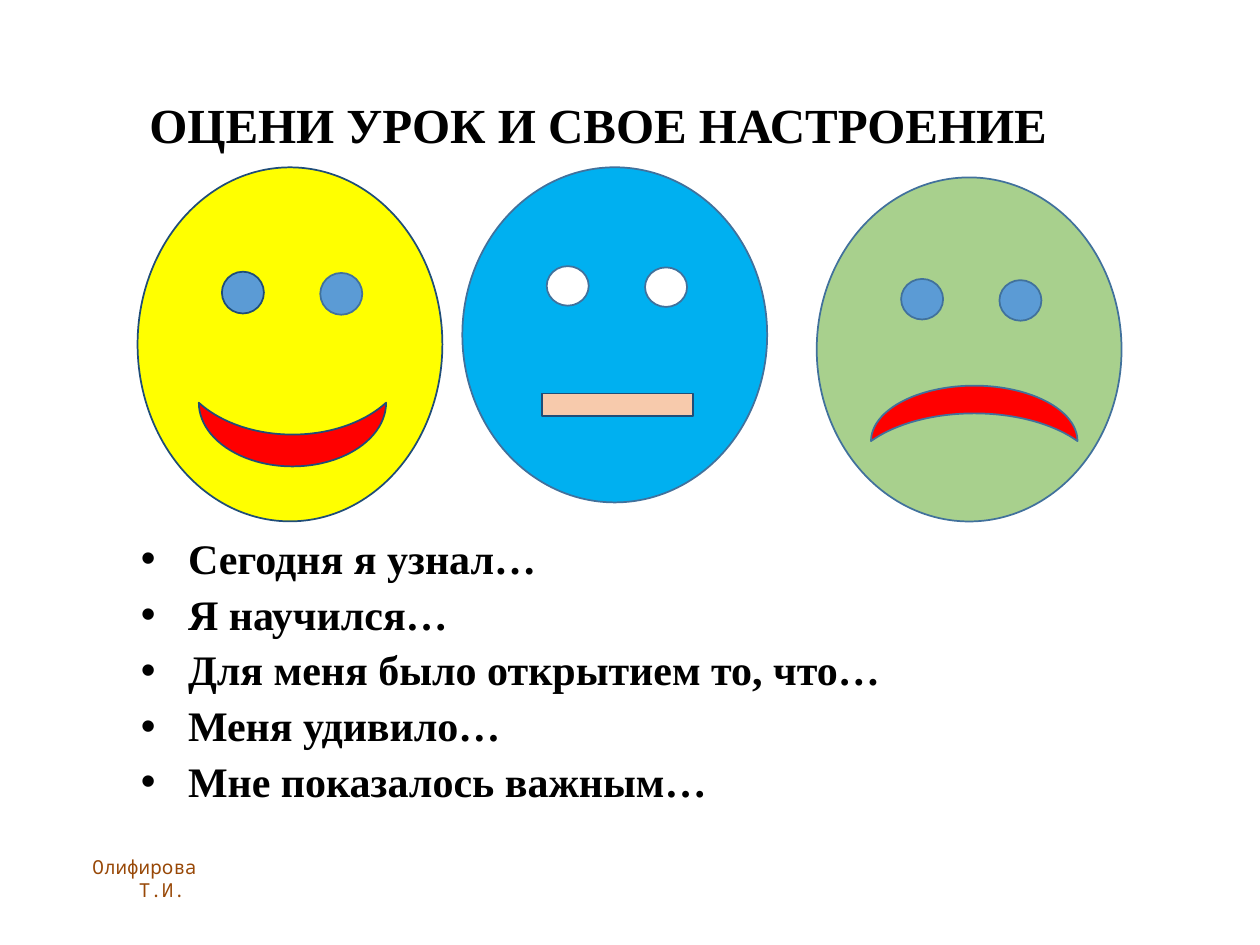
from lxml.etree import SubElement
from pptx import Presentation
from pptx.dml.color import RGBColor
from pptx.enum.shapes import MSO_SHAPE
from pptx.enum.text import MSO_ANCHOR, PP_ALIGN
from pptx.oxml.ns import qn
from pptx.util import Pt

SERIF = "Times New Roman"
BLUE, NAVY, RED = "41719C", "1F4D78", "FF0000"
FACE_WIDTH = 174.2


def color(hex_value):
    return RGBColor.from_string(hex_value)


def add_part(slide, kind, box, fill, line=BLUE, rotation=0):
    part = slide.shapes.add_shape(kind, *map(Pt, box))
    part.shadow.inherit = False
    part.fill.solid()
    part.fill.fore_color.rgb = color(fill)
    part.line.color.rgb = color(line)
    part.line.width = Pt(1)
    part.rotation = rotation
    return part


def add_text(slide, box, lines, size, font, hex_value, bold=False,
             align=PP_ALIGN.LEFT, anchor=MSO_ANCHOR.TOP, bullets=False):
    frame = slide.shapes.add_textbox(*map(Pt, box)).text_frame
    frame.word_wrap = True
    frame.vertical_anchor = anchor
    frame.text = "\n".join(lines)
    for index, paragraph in enumerate(frame.paragraphs):
        if bullets:
            props = paragraph._p.get_or_add_pPr()
            props.set("marL", str(Pt(27)))
            props.set("indent", str(Pt(-27)))
            SubElement(props, qn("a:buFont"), typeface="Arial")
            SubElement(props, qn("a:buChar"), char="•")
            paragraph.line_spacing = 0.9
            if index:
                paragraph.space_before = Pt(6)
        paragraph.alignment = align
        paragraph.font.size = Pt(size)
        paragraph.font.name = font
        paragraph.font.bold = bold
        paragraph.font.color.rgb = color(hex_value)


def add_face(slide, left, top, height, fill, eye_fill, line=BLUE):
    """Head with two eyes; the right eye sits slightly lower."""
    add_part(slide, MSO_SHAPE.OVAL, (left, top, FACE_WIDTH, height), fill, line)
    eye_top, eye_height = top + 0.295 * height, 0.118 * height
    for dx, dy, eye_line in ((48.2, 0, line), (104.4, 0.7, BLUE)):
        add_part(slide, MSO_SHAPE.OVAL,
                 (left + dx, eye_top + dy, 24, eye_height), eye_fill, eye_line)


def add_curved_mouth(slide, left, top, width, height, rotation, line):
    """Moon turned on its side to fill the given box."""
    turned = (left + (width - height) / 2, top + (height - width) / 2,
              height, width)
    add_part(slide, MSO_SHAPE.MOON, turned, RED, line, rotation)


def add_happy_face(slide, left, top):
    add_face(slide, left, top, 202.3, "FFFF00", "5B9BD5", NAVY)
    add_curved_mouth(slide, left + 35, top + 134.5, 107, 36.4, 270, NAVY)


def add_neutral_face(slide, left, top):
    add_face(slide, left, top, 191.5, "00B0F0", "FFFFFF")
    add_part(slide, MSO_SHAPE.RECTANGLE,
             (left + 45.4, top + 129.2, 86.4, 13), "F7CAAC", NAVY)


def add_sad_face(slide, left, top):
    add_face(slide, left, top, 196.6, "A8D08D", "5B9BD5")
    add_curved_mouth(slide, left + 31, top + 119, 118, 31.7, 90, BLUE)


def main():
    presentation = Presentation()
    presentation.slide_width, presentation.slide_height = Pt(720), Pt(540)
    slide = presentation.slides.add_slide(presentation.slide_layouts[6])

    # Author
    add_text(slide, (14.4, 485.3, 105.1, 20.9), ["Олифирова Т.И. "], 11,
             "Noto Sans Mono", "984807", align=PP_ALIGN.RIGHT)
    # Title
    add_text(slide, (55, 50.4, 573.8, 41), ["ОЦЕНИ УРОК И СВОЕ НАСТРОЕНИЕ"],
             28, SERIF, "000000", bold=True, align=PP_ALIGN.CENTER,
             anchor=MSO_ANCHOR.BOTTOM)
    # Mood faces
    add_happy_face(slide, 78.6, 95.6)
    add_neutral_face(slide, 264.2, 95.6)
    add_sad_face(slide, 466.7, 101.4)
    # Reflection prompts
    prompts = ["Сегодня я узнал…", "Я научился…",
               "Для меня было открытием то, что…", "Меня удивило…",
               "Мне показалось важным…"]
    add_text(slide, (73.4, 303.8, 551.5, 174.2), prompts, 24, SERIF,
             "000000", bold=True, bullets=True)

    presentation.save("out.pptx")


if __name__ == "__main__":
    main()
